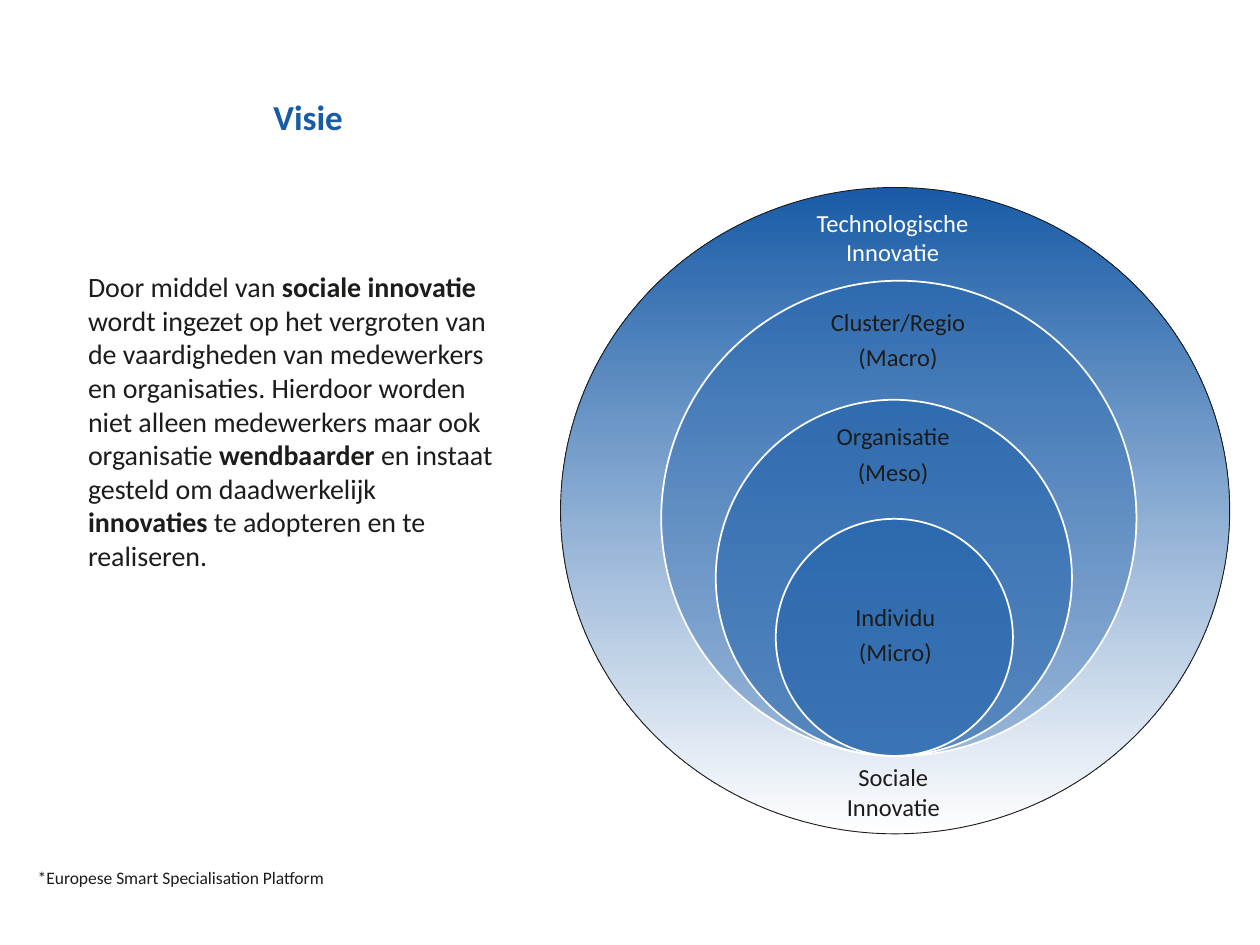
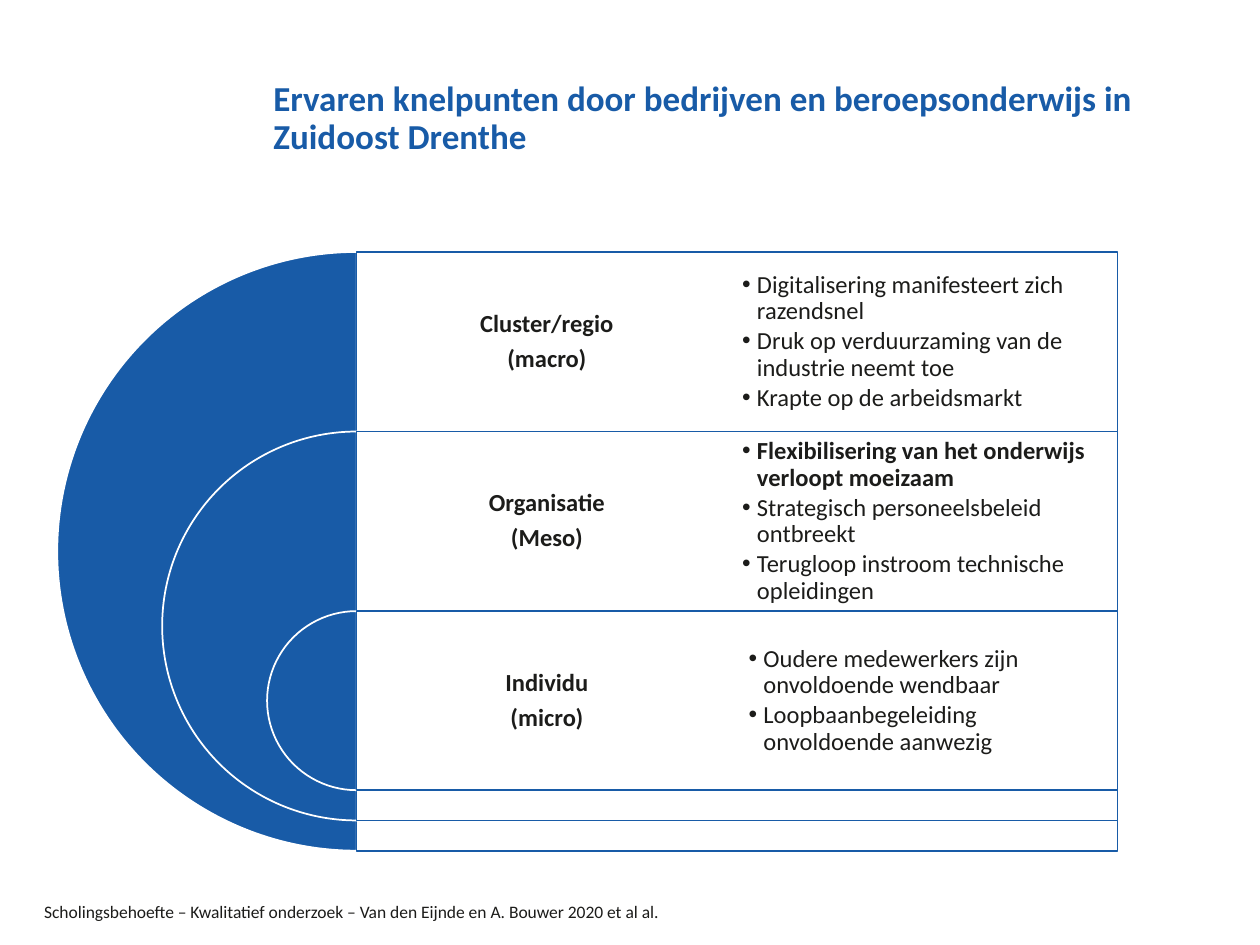
"""Build two slides on social innovation at macro, meso and micro level."""
from dataclasses import dataclass
from typing import Optional

from lxml import etree
from pptx import Presentation
from pptx import util as u
from pptx.dml import color
from pptx.enum import shapes, text
from pptx.oxml import ns


@dataclass(frozen=True)
class Theme:
    font: str = "Calibri"
    blue: str = "185BA7"
    ink: str = "1C1C1A"
    white: str = "FFFFFF"
    title: int = 20
    body: int = 16
    label: int = 14
    note: int = 10


THEME = Theme()


@dataclass(frozen=True)
class Area:
    left: float
    top: float
    width: float
    height: float

    def lengths(self) -> tuple:
        return tuple(u.Cm(v) for v in (self.left, self.top, self.width, self.height))


@dataclass(frozen=True)
class Style:
    size: int
    ink: str = THEME.ink
    bold: bool = False
    centred: bool = False
    middle: bool = False
    inset: Optional[float] = None
    spacing: float = 1.0
    after: float = 0
    bullet: bool = False


@dataclass(frozen=True)
class Ring:
    centre: float
    diameter: float
    opacity: int
    label: Area
    lines: tuple


@dataclass(frozen=True)
class Level:
    diameter: float
    lines: tuple
    points: tuple
    left: float
    width: float


TITLE = Style(THEME.title, THEME.blue, bold=True, middle=True, inset=0, spacing=0.9)
BODY = Style(THEME.body)
RING_LABEL = Style(THEME.label, centred=True, middle=True, inset=0.28, spacing=0.9, after=5)
LEVEL_LABEL = Style(THEME.label, bold=True, centred=True, middle=True, inset=0.15,
                    spacing=0.9, after=5)
POINTS = Style(THEME.label, middle=True, inset=0.69, spacing=0.9, after=2, bullet=True)
TOP_LABEL = Style(THEME.label, THEME.white, centred=True)
BOTTOM_LABEL = Style(THEME.label, centred=True)
NOTE = Style(THEME.note)
WIDE_NOTE = Style(THEME.note, spacing=1.5)

TITLE_AREA = Area(5.51, 1.91, 17.88, 0.97)
RING_BOTTOM = 15.24
RINGS = (
    Ring(18.12, 9.58, 37, Area(16.43, 6.15, 3.35, 1.45), ("Cluster/Regio", "(Macro)")),
    Ring(18.02, 7.18, 50, Area(16.33, 8.51, 3.35, 1.35), ("Organisatie", "(Meso)")),
    Ring(18.03, 4.78, 43, Area(16.36, 11.63, 3.38, 2.39), ("Individu", "(Micro)")),
)
LEVEL_LEFT, LEVEL_TOP, LEVEL_WIDTH, LEVEL_STEP = 7.19, 5.08, 15.34, 3.62
LEVELS = (
    Level(12.07, ("Cluster/regio", "(macro)"), (
        "Digitalisering manifesteert zich razendsnel",
        "Druk op verduurzaming van de industrie neemt toe",
        "Krapte op de arbeidsmarkt"), 14.27, 8.81),
    Level(7.84, ("Organisatie", "(Meso)"), (
        "**Flexibilisering van het onderwijs verloopt moeizaam**",
        "Strategisch personeelsbeleid ontbreekt",
        "Terugloop instroom technische opleidingen"), 14.27, 8.81),
    Level(3.61, ("Individu", "(micro)"), (
        "Oudere medewerkers zijn onvoldoende wendbaar",
        "Loopbaanbegeleiding onvoldoende aanwezig"), 14.4, 8.61),
)
VISION = (
    "Door middel van **sociale innovatie** wordt ingezet op het vergroten van de "
    "vaardigheden van medewerkers en organisaties. Hierdoor worden niet alleen "
    "medewerkers maar ook organisatie **wendbaarder** en instaat gesteld om "
    "daadwerkelijk **innovaties** te adopteren en te realiseren.")


def rgb(value: str) -> color.RGBColor:
    return color.RGBColor.from_string(value)


def set_bullet(para, shown: bool) -> None:
    props = para._p.get_or_add_pPr()
    indent = u.Cm(0.3) if shown else 0
    props.set("marL", str(indent))
    props.set("indent", str(-indent))
    if shown:
        font = etree.SubElement(props, ns.qn("a:buFont"))
        font.set("typeface", "Arial")
        etree.SubElement(props, ns.qn("a:buChar")).set("char", "•")
    else:
        etree.SubElement(props, ns.qn("a:buNone"))


def write(box, lines: tuple, style: Style) -> None:
    frame = box.text_frame
    frame.word_wrap = True
    frame.auto_size = text.MSO_AUTO_SIZE.NONE
    frame.vertical_anchor = text.MSO_ANCHOR.MIDDLE if style.middle else text.MSO_ANCHOR.TOP
    if style.inset is not None:
        frame.margin_left = frame.margin_right = u.Cm(style.inset)
        frame.margin_top = frame.margin_bottom = u.Cm(style.inset)
    for number, line in enumerate(lines):
        para = frame.add_paragraph() if number else frame.paragraphs[0]
        set_bullet(para, style.bullet)
        para.alignment = text.PP_ALIGN.CENTER if style.centred else text.PP_ALIGN.LEFT
        para.line_spacing = style.spacing
        para.space_before = u.Pt(0)
        para.space_after = u.Pt(style.after)
        for part, words in enumerate(line.split("**")):
            if words:
                span = para.add_run()
                span.text = words
                span.font.name = THEME.font
                span.font.size = u.Pt(style.size)
                span.font.bold = style.bold or part % 2 == 1
                span.font.color.rgb = rgb(style.ink)


def place(box, area: Area, lines: tuple, style: Style) -> None:
    box.left, box.top, box.width, box.height = area.lengths()
    write(box, lines, style)


def add_text(page, area: Area, lines: tuple, style: Style) -> None:
    write(page.shapes.add_textbox(*area.lengths()), lines, style)


def add_figure(page, kind, area: Area, line: str, width: float = 1,
               fill: str = THEME.blue, opacity: int = 100):
    figure = page.shapes.add_shape(kind, *area.lengths())
    figure.shadow.inherit = False
    figure.line.color.rgb = rgb(line)
    figure.line.width = u.Pt(width)
    figure.fill.solid()
    figure.fill.fore_color.rgb = rgb(fill)
    if opacity < 100:
        tint = figure.element.spPr.find(ns.qn("a:solidFill")).find(ns.qn("a:srgbClr"))
        etree.SubElement(tint, ns.qn("a:alpha")).set("val", str(opacity * 1000))
    return figure


def add_page(deck, layout: int, title: str):
    page = deck.slides.add_slide(deck.slide_layouts[layout])
    place(page.shapes.title, TITLE_AREA, (title,), TITLE)
    return page


def build_vision(deck) -> None:
    page = add_page(deck, 1, "Visie")
    place(page.placeholders[1], Area(1.52, 5.31, 8.69, 10.49), (VISION,), BODY)
    outer = add_figure(page, shapes.MSO_SHAPE.OVAL, Area(11.3, 3.78, 13.49, 13.03),
                       THEME.ink, 0.5)
    outer.fill.gradient()
    outer.fill.gradient_angle = 270
    for stop, position, shade in zip(outer.fill.gradient_stops, (0, 1),
                                     (THEME.blue, THEME.white)):
        stop.position = position
        stop.color.rgb = rgb(shade)
    for ring in RINGS:
        area = Area(ring.centre - ring.diameter / 2, RING_BOTTOM - ring.diameter,
                    ring.diameter, ring.diameter)
        add_figure(page, shapes.MSO_SHAPE.OVAL, area, THEME.white, opacity=ring.opacity)
        add_text(page, ring.label, ring.lines, RING_LABEL)
    add_text(page, Area(15.11, 4.06, 5.77, 1.45), ("Technologische", "Innovatie"), TOP_LABEL)
    add_text(page, Area(16.18, 15.24, 3.66, 1.45), ("Sociale", "Innovatie"), BOTTOM_LABEL)
    add_text(page, Area(0.51, 17.15, 12.7, 0.84),
             ("*Europese Smart Specialisation Platform",), WIDE_NOTE)


def build_bottlenecks(deck) -> None:
    page = add_page(deck, 4, "Ervaren knelpunten door bedrijven en beroepsonderwijs "
                             "in Zuidoost Drenthe")
    add_text(page, Area(0.64, 18.03, 22.78, 0.69),
             ("Scholingsbehoefte – Kwalitatief onderzoek – Van den Eijnde en "
              "A. Bouwer 2020 et al al.",), NOTE)
    for number, level in enumerate(LEVELS):
        top = LEVEL_TOP + number * LEVEL_STEP
        size = level.diameter
        pie = add_figure(page, shapes.MSO_SHAPE.PIE,
                         Area(LEVEL_LEFT - size / 2, top, size, size), THEME.white)
        pie.adjustments[0], pie.adjustments[1] = 54, 162
        add_figure(page, shapes.MSO_SHAPE.RECTANGLE,
                   Area(LEVEL_LEFT, top, LEVEL_WIDTH, size), THEME.blue,
                   fill=THEME.white, opacity=90)
        add_text(page, Area(LEVEL_LEFT, top, LEVEL_WIDTH / 2, LEVEL_STEP),
                 level.lines, LEVEL_LABEL)
        points = page.placeholders[number + 1]
        place(points, Area(level.left, top, level.width, LEVEL_STEP), level.points, POINTS)
        points.element.getparent().append(points.element)
    spare = page.placeholders[len(LEVELS) + 1].element
    spare.getparent().remove(spare)


def main() -> None:
    deck = Presentation()
    deck.slide_width, deck.slide_height = u.Cm(25.4), u.Cm(19.05)
    build_vision(deck)
    build_bottlenecks(deck)
    deck.save("out.pptx")


if __name__ == "__main__":
    main()
